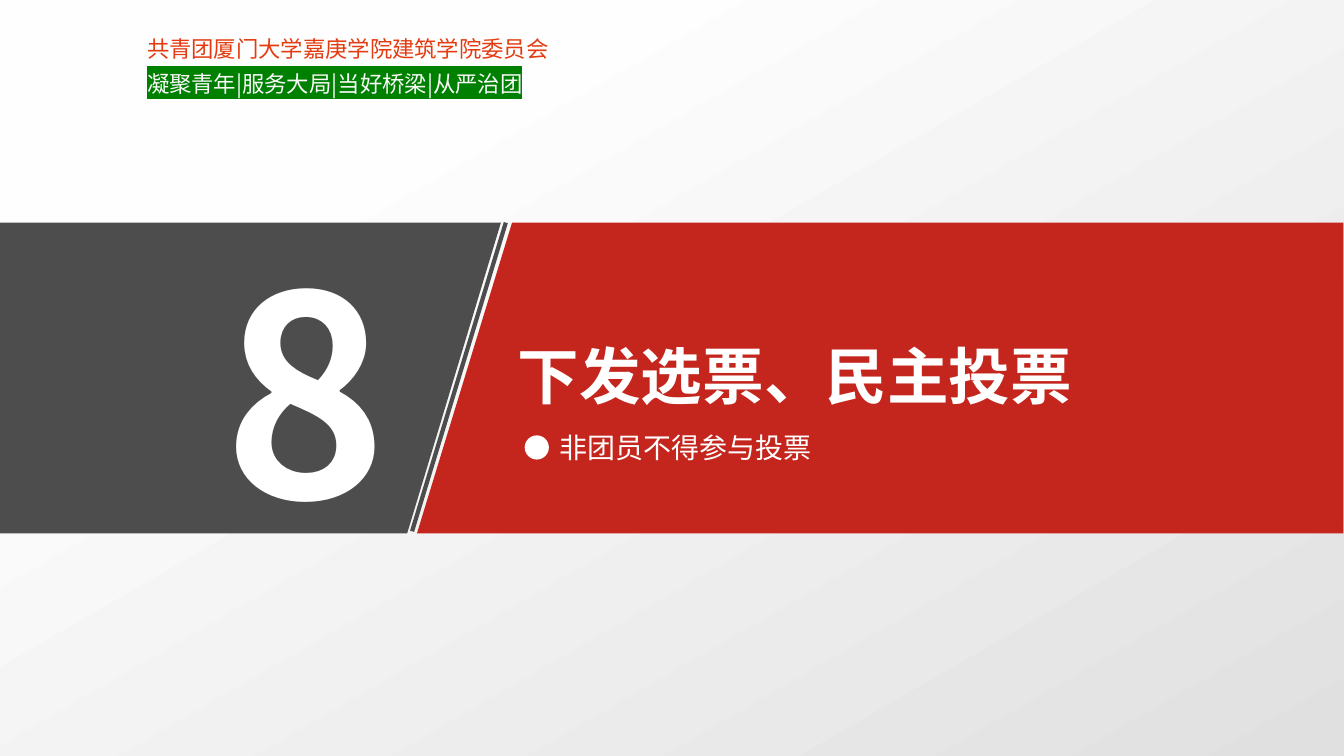
import pptx
import pptx.util
import pptx.dml.color
import pptx.enum.shapes
import pptx.enum.text
import pptx.oxml
import pptx.oxml.ns
from pptx.util import Pt

RGBColor = pptx.dml.color.RGBColor
WHITE = RGBColor(0xFF, 0xFF, 0xFF)
OFF_WHITE = RGBColor(0xF8, 0xF8, 0xF8)
ORANGE = RGBColor(0xE4, 0x3C, 0x11)
RED = RGBColor(0xC4, 0x26, 0x1D)
GRAY = RGBColor(0x4D, 0x4D, 0x4D)
GREEN = RGBColor(0x00, 0x80, 0x00)
BACKGROUND_STOPS = [(0.23, RGBColor(0xFE, 0xFE, 0xFE)), (1, RGBColor(0xE0, 0xE0, 0xE0))]
FONT = "Noto Sans CJK SC"

COMMITTEE = "共青团厦门大学嘉庚学院建筑学院委员会"
MOTTO = "|".join(["凝聚青年", "服务大局", "当好桥梁", "从严治团"])
SECTION_NUMBER = "8"
SECTION_TITLE = "下发选票、民主投票"
SECTION_NOTE = "非团员不得参与投票"

WIDTH, HEIGHT = 960.5, 540
BAND_TOP, BAND_BOTTOM = 159, 381
RED_BAND = [(366.5, BAND_TOP), (WIDTH, BAND_TOP), (WIDTH, BAND_BOTTOM), (298, BAND_BOTTOM)]
GRAY_BAND = [(358, BAND_TOP), (291, BAND_BOTTOM), (0, BAND_BOTTOM), (0, BAND_TOP)]
STRIPE = (361.5, BAND_TOP, 294.5, 379.5)
BULLET_DOT = (375, 311, 17.3, 17.3)


def add_text(slide, text, *, box, size, color=WHITE, bold=False, align=None,
             space_after=0, highlights=None):
    shape = slide.shapes.add_textbox(*map(Pt, box))
    frame = shape.text_frame
    frame.word_wrap = True
    frame.vertical_anchor = pptx.enum.text.MSO_ANCHOR.MIDDLE
    frame.text = text
    for index, paragraph in enumerate(frame.paragraphs):
        paragraph.alignment = align
        paragraph.space_after = Pt(space_after)
        for run in paragraph.runs:
            font = run.font
            font.size, font.bold, font.name = Pt(size), bold, FONT
            font.color.rgb = color[index] if isinstance(color, list) else color
            properties = run._r.get_or_add_rPr()
            latin = properties.find(pptx.oxml.ns.qn("a:latin"))
            east_asian = pptx.oxml.parse_xml(
                f'<a:ea {pptx.oxml.ns.nsdecls("a")} typeface="{FONT}"/>')
            latin.addnext(east_asian)
            if highlights and highlights[index]:
                latin.addprevious(pptx.oxml.parse_xml(
                    f'<a:highlight {pptx.oxml.ns.nsdecls("a")}>'
                    f'<a:srgbClr val="{highlights[index]}"/></a:highlight>'))


def paint(shape, color):
    shape.shadow.inherit = False
    shape.fill.solid()
    shape.fill.fore_color.rgb = color
    shape.line.fill.background()


def add_band(slide, points, color):
    builder = slide.shapes.build_freeform(*points[0], scale=Pt(1))
    builder.add_line_segments(points[1:], close=True)
    paint(builder.convert_to_shape(), color)


def main():
    presentation = pptx.Presentation()
    presentation.slide_width, presentation.slide_height = Pt(WIDTH), Pt(HEIGHT)
    slide = presentation.slides.add_slide(presentation.slide_layouts[6])

    background = slide.background.fill
    background.gradient()
    background.gradient_angle = 300
    for stop, (position, color) in zip(background.gradient_stops, BACKGROUND_STOPS):
        stop.position = position
        stop.color.rgb = color

    add_text(slide, f"{COMMITTEE}\n{MOTTO}", box=(98, 21, 430.5, 52), size=16,
             color=[ORANGE, OFF_WHITE], align=pptx.enum.text.PP_ALIGN.JUSTIFY,
             space_after=6, highlights=[None, GREEN])

    add_band(slide, RED_BAND, RED)
    add_band(slide, GRAY_BAND, GRAY)
    add_text(slide, SECTION_TITLE, box=(363, 237.5, 577, 60.5), size=44, bold=True)
    add_text(slide, SECTION_NUMBER, box=(152.5, 152.5, 137, 248.5), size=199, bold=True)

    stripe = slide.shapes.add_connector(
        pptx.enum.shapes.MSO_CONNECTOR.STRAIGHT, *map(Pt, STRIPE))
    stripe.line.color.rgb = GRAY
    stripe.line.width = Pt(3)
    stripe._element.spPr.append(
        pptx.oxml.parse_xml(f'<a:effectLst {pptx.oxml.ns.nsdecls("a")}/>'))

    dot = slide.shapes.add_shape(pptx.enum.shapes.MSO_SHAPE.OVAL, *map(Pt, BULLET_DOT))
    paint(dot, WHITE)
    add_text(slide, SECTION_NOTE, box=(392.5, 304, 479, 31.5), size=20)

    presentation.save("out.pptx")


if __name__ == "__main__":
    main()
